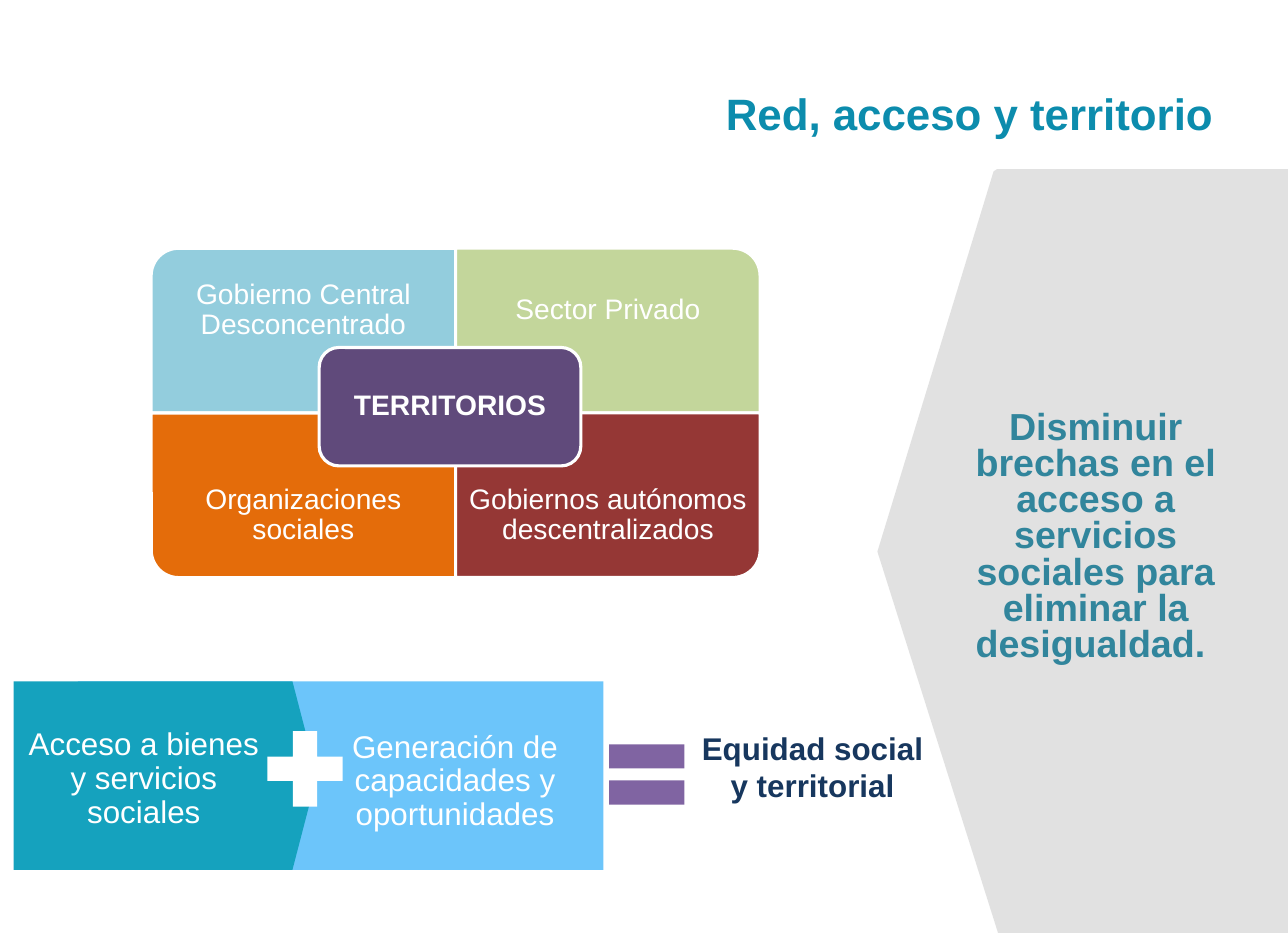
from dataclasses import dataclass

from lxml import etree
from pptx import Presentation
from pptx.dml.color import RGBColor
from pptx.enum.shapes import MSO_SHAPE
from pptx.enum.text import MSO_ANCHOR, PP_ALIGN
from pptx.oxml.ns import qn
from pptx.util import Inches, Pt

RECTANGLE = MSO_SHAPE.RECTANGLE
ROUNDED = MSO_SHAPE.ROUNDED_RECTANGLE
ONE_ROUND_CORNER = MSO_SHAPE.ROUND_1_RECTANGLE
PENTAGON = MSO_SHAPE.PENTAGON
PLUS = MSO_SHAPE.MATH_PLUS
EQUAL = MSO_SHAPE.MATH_EQUAL
TOP, MIDDLE = MSO_ANCHOR.TOP, MSO_ANCHOR.MIDDLE
CENTER, RIGHT = PP_ALIGN.CENTER, PP_ALIGN.RIGHT

# Grid of square cells, ten to the inch
COLUMNS, ROWS = 114.2, 82.7


@dataclass(frozen=True)
class Theme:
    font: str = "Arial"
    white: str = "FFFFFF"
    title: str = "0C8CAD"
    goal_text: str = "31859C"
    goal_fill: str = "D9D9D9"
    result_text: str = "17375E"
    central: str = "93CDDD"
    private: str = "C3D69B"
    social: str = "E46C0A"
    autonomous: str = "953735"
    territory: str = "604A7B"
    access: str = "15A2BE"
    capacity: str = "6CC5FA"
    equal: str = "8064A2"
    title_size: int = 28
    goal_size: int = 24
    flow_size: int = 20
    matrix_size: int = 18
    border: int = 2


THEME = Theme()


@dataclass(frozen=True)
class Area:
    left: float
    top: float
    width: float
    height: float


@dataclass(frozen=True)
class Label:
    area: Area
    text: str
    size: int
    color: str = THEME.white
    bold: bool = False
    align: PP_ALIGN = CENTER
    anchor: MSO_ANCHOR = TOP
    spacing: float = 0.9


@dataclass(frozen=True)
class Block:
    kind: MSO_SHAPE
    area: Area
    fill: str
    bordered: bool = False
    turn: int = 0
    adjustment: float | None = None


@dataclass(frozen=True)
class Quadrant:
    column: int
    row: int
    turn: int
    fill: str
    text: str


def cells(count: float) -> int:
    return Inches(count / 10)


def place(area: Area) -> tuple[int, int, int, int]:
    return cells(area.left), cells(area.top), cells(area.width), cells(area.height)


def paint(shape, fill: str) -> None:
    shape.shadow.inherit = False
    shape.fill.solid()
    shape.fill.fore_color.rgb = RGBColor.from_string(fill)
    shape.line.fill.background()


def draw_block(page, block: Block) -> None:
    area = block.area
    if block.turn % 180:
        # A quarter turn swaps the sides around the same centre
        shift = (area.width - area.height) / 2
        area = Area(area.left + shift, area.top - shift, area.height, area.width)
    shape = page.shapes.add_shape(block.kind, *place(area))
    shape.rotation = block.turn
    paint(shape, block.fill)
    if block.bordered:
        shape.line.color.rgb = RGBColor.from_string(THEME.white)
        shape.line.width = Pt(THEME.border)
    if block.adjustment is not None:
        shape.adjustments[0] = block.adjustment


def draw_label(page, label: Label) -> None:
    frame = page.shapes.add_textbox(*place(label.area)).text_frame
    frame.word_wrap = True
    frame.vertical_anchor = label.anchor
    para = frame.paragraphs[0]
    para.text = label.text
    para.alignment = label.align
    para.line_spacing = label.spacing
    para.font.name = THEME.font
    para.font.size = Pt(label.size)
    para.font.bold = label.bold
    para.font.color.rgb = RGBColor.from_string(label.color)


def draw_goal_panel(page) -> None:
    outline = [(88.4, 15), (88.1, 15.2), (77.8, 48.9), (88.5, ROWS), (COLUMNS, ROWS)]
    builder = page.shapes.build_freeform(cells(COLUMNS), cells(15))
    builder.add_line_segments([(cells(x), cells(y)) for x, y in outline])
    panel = builder.convert_to_shape()
    paint(panel, THEME.goal_fill)
    color = panel.fill._xPr.find(qn("a:solidFill"))[0]
    etree.SubElement(color, qn("a:alpha"), val="77000")


def draw_matrix(page) -> None:
    left, top, width, height, text_height = 13.4, 22, 27, 14.6, 11
    quadrants = [
        Quadrant(0, 0, 270, THEME.central, "Gobierno Central Desconcentrado"),
        Quadrant(1, 0, 0, THEME.private, "Sector Privado"),
        Quadrant(0, 1, 180, THEME.social, "Organizaciones sociales"),
        Quadrant(1, 1, 90, THEME.autonomous, "Gobiernos autónomos descentralizados"),
    ]
    for item in quadrants:
        x, y = left + item.column * width, top + item.row * height
        draw_block(page, Block(ONE_ROUND_CORNER, Area(x, y, width, height),
                               item.fill, True, item.turn))
        # Text keeps to the outer edge, clear of the centre
        text_top = y + item.row * (height - text_height)
        draw_label(page, Label(Area(x, text_top, width, text_height), item.text,
                               THEME.matrix_size, anchor=MIDDLE))
    center = Area(28.3, 30.8, 23.2, 10.5)
    draw_block(page, Block(ROUNDED, center, THEME.territory, True))
    draw_label(page, Label(center, "TERRITORIOS", THEME.matrix_size,
                           bold=True, anchor=MIDDLE))


def draw_equation(page) -> None:
    size = THEME.flow_size
    blocks = [
        Block(RECTANGLE, Area(6.9, 60.4, 46.6, 16.7), THEME.capacity),
        Block(PENTAGON, Area(1.2, 60.4, 26.9, 16.7), THEME.access, adjustment=0.13),
        Block(EQUAL, Area(52.8, 64.1, 9.1, 9.1), THEME.equal),
        Block(PLUS, Area(22.5, 63.6, 9.1, 9.1), THEME.white),
    ]
    labels = [
        Label(Area(1.2, 64.1, 23.1, 10.2), "Acceso a bienes y servicios sociales", size),
        Label(Area(28.8, 64.3, 23.1, 10.2),
              "Generación de capacidades y oportunidades", size),
        Label(Area(61, 64.1, 22.1, 7.7), "Equidad social y territorial", size,
              THEME.result_text, bold=True, spacing=1.0),
    ]
    for block in blocks:
        draw_block(page, block)
    for label in labels:
        draw_label(page, label)


def main() -> None:
    deck = Presentation()
    deck.slide_width, deck.slide_height = cells(COLUMNS), cells(ROWS)
    page = deck.slides.add_slide(deck.slide_layouts[6])

    # Heading
    draw_label(page, Label(Area(44.6, 4.7, 63.9, 10.7), "Red, acceso y territorio",
                           THEME.title_size, THEME.title, True, RIGHT, MIDDLE, 1.0))
    # Goal on the right
    draw_goal_panel(page)
    draw_label(page, Label(
        Area(81.9, 36, 30.5, 20.5),
        "Disminuir brechas en el acceso a servicios sociales para eliminar"
        " la desigualdad. ",
        THEME.goal_size, THEME.goal_text, True, spacing=0.8))
    # Actors around the territories, then the equation below
    draw_matrix(page)
    draw_equation(page)
    deck.save("out.pptx")


if __name__ == "__main__":
    main()
